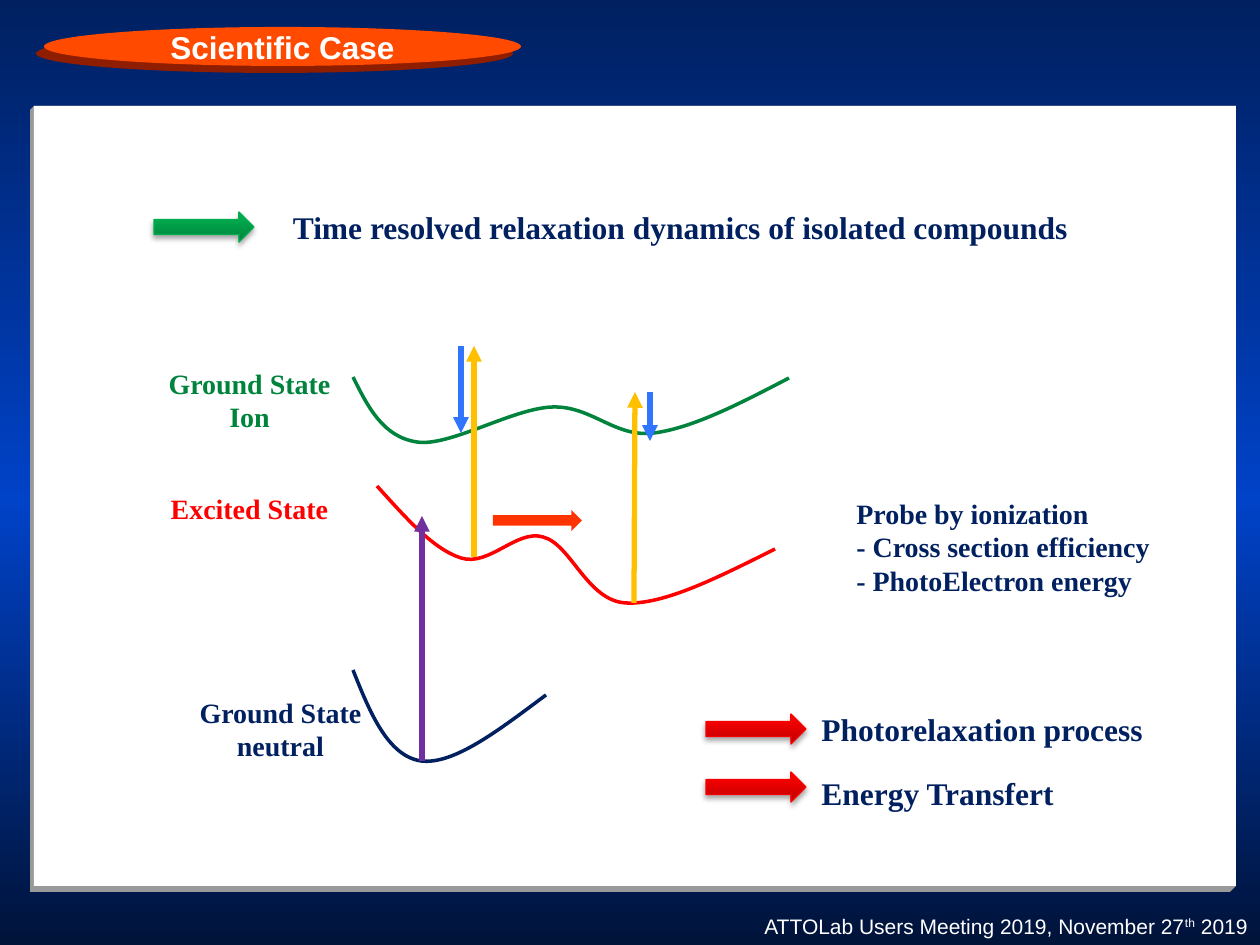
from lxml import etree
from pptx import Presentation
from pptx.dml.color import RGBColor
from pptx.enum.shapes import MSO_CONNECTOR as Connector, MSO_SHAPE as Shape
from pptx.enum.text import MSO_ANCHOR as Anchor, PP_ALIGN as Align
from pptx.oxml.ns import qn
from pptx.util import Pt

PX = 914400 // 126
SERIF, SANS = "Times New Roman", "Arial"
COLORS = {
    "white": "FFFFFF", "navy": "002060", "orange": "FF3300", "title": "FF4A00",
    "title_edge": "8F1D00", "panel_edge": "999999", "red": "FF0000",
    "green": "00833C", "purple": "7030A0", "gold": "FFC000", "blue": "3075FF",
    "green_line": "00AC4E", "red_line": "F90000",
}
BACKGROUND = [(0, "002060"), (53, "0042C8"), (100, "001339")]
GREEN_STOPS = [(0, "00833C"), (80, "00AB4E"), (100, "00AB4E")]
RED_STOPS = [(0, "BE0000"), (80, "F70000"), (100, "F80000")]


def rgb(name):
    return RGBColor.from_string(COLORS[name])


def add(parent, tag, **attributes):
    return etree.SubElement(parent, qn(tag), attributes)


class SlideBuilder:
    def __init__(self, presentation):
        self.slide = presentation.slides.add_slide(presentation.slide_layouts[6])
        self.shapes = self.slide.shapes

    def gradient(self, fill, element, stops, angle):
        fill.gradient()
        fill.gradient_angle = angle
        stop_list = next(element.iter(qn("a:gsLst")))
        for old in list(stop_list):
            stop_list.remove(old)
        for position, color in stops:
            stop = add(stop_list, "a:gs", pos=str(position * 1000))
            add(stop, "a:srgbClr", val=color)

    def background(self, stops):
        self.gradient(self.slide.background.fill, self.slide.element, stops, 270)

    def shape(self, kind, left, top, width, height, color):
        shape = self.shapes.add_shape(kind, left * PX, top * PX, width * PX, height * PX)
        return self.flat(shape, color)

    def flat(self, shape, color):
        shape.shadow.inherit = False
        shape.fill.solid()
        shape.fill.fore_color.rgb = rgb(color)
        shape.line.fill.background()
        return shape

    def polygon(self, points, color):
        return self.flat(self.outline(points, True), color)

    def outline(self, points, close):
        (x, y), *rest = points
        builder = self.shapes.build_freeform(x * PX, y * PX)
        builder.add_line_segments([(x * PX, y * PX) for x, y in rest], close=close)
        return builder.convert_to_shape()

    def curve(self, points, color):
        """Start point, then two control points and an end point per segment."""
        shape = self.outline(points, False)
        shape.shadow.inherit = False
        shape.fill.background()
        shape.line.color.rgb = rgb(color)
        shape.line.width = Pt(2)
        lines = list(shape.element.iter(qn("a:lnTo")))
        for first in range(0, len(lines), 3):
            bezier = etree.Element(qn("a:cubicBezTo"))
            lines[first].addprevious(bezier)
            for line in lines[first:first + 3]:
                bezier.append(line[0])
                line.getparent().remove(line)

    def shaded_arrow(self, left, top, stops, line_color):
        arrow = self.shape(Shape.RIGHT_ARROW, left, top, 100, 30, "red")
        self.gradient(arrow.fill, arrow.element, stops, 90)
        arrow.line.color.rgb = rgb(line_color)
        arrow.line.width = Pt(0.75)
        effects = next(arrow.element.iter(qn("a:effectLst")))
        shadow = add(effects, "a:outerShdw", blurRad=str(Pt(3.1)), dist=str(Pt(1.8)),
                     dir="5400000", rotWithShape="0")
        add(add(shadow, "a:srgbClr", val="000000"), "a:alpha", val="35000")

    def vertical_arrow(self, start, end, color):
        (x1, y1), (x2, y2) = start, end
        arrow = self.shapes.add_connector(
            Connector.STRAIGHT, x1 * PX, y1 * PX, x2 * PX, y2 * PX)
        arrow.line.color.rgb = rgb(color)
        arrow.line.width = Pt(3)
        properties = arrow.element.spPr
        add(properties.get_or_add_ln(), "a:tailEnd", type="triangle")
        add(properties, "a:effectLst")

    def text(self, left, top, width, height, lines, size, color="navy",
             align=Align.LEFT, font=SERIF, bold=True):
        box = self.shapes.add_textbox(left * PX, top * PX, width * PX, height * PX)
        box.text_frame.word_wrap = True
        self.fill_text(box.text_frame, lines, size, color, align, font, bold)
        return box

    def fill_text(self, frame, lines, size, color, align, font, bold):
        frame.text = "\n".join(lines)
        for paragraph in frame.paragraphs:
            paragraph.alignment = align
            paragraph.font.name = font
            paragraph.font.size = Pt(size)
            paragraph.font.bold = bold
            paragraph.font.color.rgb = rgb(color)


def main():
    presentation = Presentation()
    presentation.slide_width = 1260 * PX
    presentation.slide_height = 945 * PX
    builder = SlideBuilder(presentation)
    builder.background(BACKGROUND)

    # White panel with its raised edge
    builder.polygon([(34, 106), (1236, 106), (1236, 886), (1230, 892),
                     (30, 892), (30, 110)], "panel_edge")
    builder.shape(Shape.RECTANGLE, 34, 106, 1202, 780, "white")

    # Slide title
    builder.shape(Shape.OVAL, 36, 34, 477, 39, "title_edge")
    title = builder.shape(Shape.OVAL, 44, 27, 477, 39, "title")
    title.text_frame.word_wrap = False
    title.text_frame.vertical_anchor = Anchor.MIDDLE
    builder.fill_text(title.text_frame, ["Scientific Case"], 18, "white",
                      Align.CENTER, SANS, True)

    # Footer, with a raised ordinal
    footer = builder.text(610, 907, 650, 38, ["ATTOLab Users Meeting 2019, November 27"],
                          12, "white", Align.RIGHT, SANS, False)
    paragraph = footer.text_frame.paragraphs[0]
    for words in ("th", " 2019"):
        paragraph.add_run().text = words
    ordinal = list(footer.element.iter(qn("a:r")))[1]
    ordinal.get_or_add_rPr().set("baseline", "30000")

    # Headline
    builder.shaded_arrow(154, 212, GREEN_STOPS, "green_line")
    builder.text(249, 202, 863, 50,
                 ["Time resolved relaxation dynamics of isolated compounds"],
                 18, align=Align.CENTER)

    # Energy curves
    builder.curve([(353, 670), (370, 713), (388, 756), (421, 761),
                   (454, 765), (499, 730), (546, 695)], "navy")
    builder.curve([(377, 486), (406, 518), (433, 549), (461, 558),
                   (489, 567), (517, 529), (543, 537),
                   (571, 544), (587, 601), (626, 603),
                   (664, 605), (719, 577), (775, 549)], "red")
    builder.curve([(353, 377), (368, 407), (383, 437), (417, 442),
                   (450, 447), (513, 408), (553, 407),
                   (592, 406), (615, 438), (654, 433),
                   (693, 428), (741, 403), (789, 378)], "green")

    # Transitions
    builder.shape(Shape.RIGHT_ARROW, 493, 510, 89, 21, "orange")
    for start, end, color in (
        ((422, 761), (422, 516), "purple"),
        ((634, 603), (635, 392), "gold"),
        ((474, 557), (474, 346), "gold"),
        ((461, 346), (461, 433), "blue"),
        ((650, 392), (650, 441), "blue"),
    ):
        builder.vertical_arrow(start, end, color)

    # State labels
    for left, top, height, lines, color in (
        (186, 689, 81, ["Ground State", "neutral"], "navy"),
        (155, 360, 81, ["Ground State", "Ion"], "green"),
        (155, 485, 47, ["Excited State"], "red"),
    ):
        builder.text(left, top, 189, height, lines, 16, color, Align.CENTER)

    # Probe notes
    builder.text(844, 490, 362, 115, ["Probe by ionization", "- Cross section efficiency",
                                      "- PhotoElectron energy"], 16)

    # Conclusions
    for arrow_top, text_top, label in ((714, 704, "Photorelaxation process"),
                                       (772, 768, "Energy Transfert")):
        builder.shaded_arrow(706, arrow_top, RED_STOPS, "red_line")
        builder.text(809, text_top, 397, 50, [label], 18)

    presentation.save("out.pptx")


if __name__ == "__main__":
    main()
